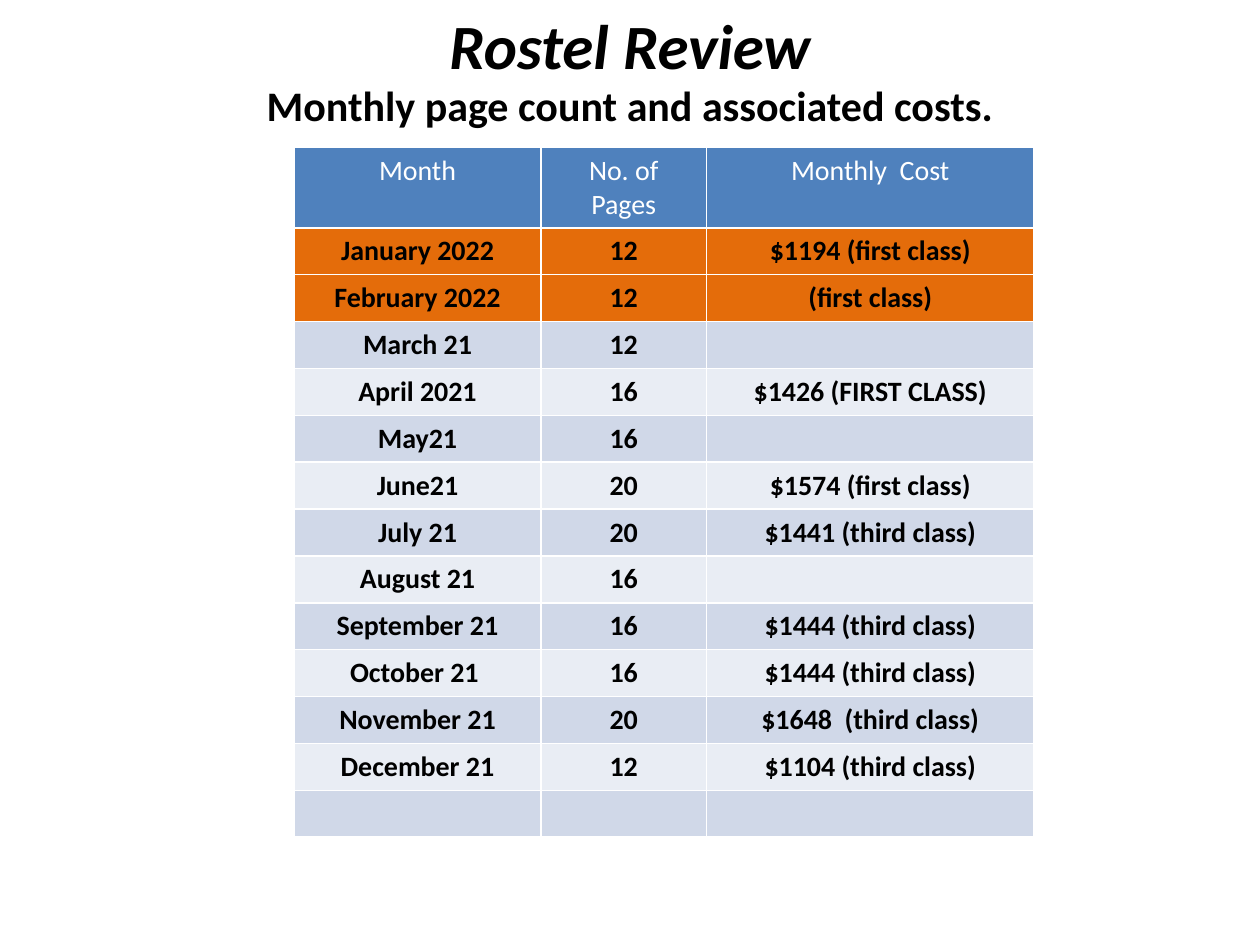
from dataclasses import dataclass
from typing import Any

from lxml.etree import SubElement
from pptx import Presentation
from pptx.dml.color import RGBColor as Rgb
from pptx.enum.text import MSO_ANCHOR as Anchor, PP_ALIGN as Align
from pptx.oxml.ns import qn
from pptx.util import Pt


@dataclass(frozen=True)
class Theme:
    font: str = "Calibri"
    title_size: int = 36
    subtitle_size: int = 24
    table_size: int = 16
    ink: str = "000000"
    header_ink: str = "FFFFFF"
    header_fill: str = "4F81BD"
    current_fill: str = "E46C0A"
    bands: tuple[str, str] = ("D0D8E8", "E9EDF4")


@dataclass(frozen=True)
class Issue:
    month: str = ""
    pages: str = ""
    cost: str = ""
    current: bool = False


THEME = Theme()
HEADINGS = ("Month", "No. of Pages", "Monthly  Cost")
COLUMN_WIDTHS = (141.2, 94.4, 187.4)
HEADER_HEIGHT = 45.8
ROW_HEIGHT = 26.8
ISSUES = (
    Issue("January 2022", "12", "$1194 (first class)", current=True),
    Issue("February 2022", "12", "(first class)", current=True),
    Issue("March 21", "12"),
    Issue("April 2021", "16", "$1426 (FIRST CLASS)"),
    Issue("May21", "16"),
    Issue("June21", "20", "$1574 (first class)"),
    Issue("July 21", "20", "$1441 (third class)"),
    Issue("August 21", "16"),
    Issue("September 21", "16", "$1444 (third class)"),
    Issue("October 21 ", "16", "$1444 (third class)"),
    Issue("November 21", "20", "$1648  (third class)"),
    Issue("December 21", "12", "$1104 (third class)"),
    Issue(),
)


def place(shape: Any, left: float, top: float, width: float, height: float) -> None:
    box = {"left": left, "top": top, "width": width, "height": height}
    for name, points in box.items():
        setattr(shape, name, Pt(points))


def write(frame: Any, text: str, size: int, ink: str, **styles: bool) -> None:
    paragraph = frame.paragraphs[0]
    paragraph.alignment = Align.CENTER
    if not text:
        SubElement(paragraph._p, qn("a:endParaRPr"), sz=str(size * 100))
        return
    run = paragraph.add_run()
    run.text = text
    formats = {"name": THEME.font, "size": Pt(size), **styles}
    for name, value in formats.items():
        setattr(run.font, name, value)
    run.font.color.rgb = Rgb.from_string(ink)


def fill_row(row: Any, texts: tuple[str, ...], fill: str, ink: str, bold: bool) -> None:
    for cell, text in zip(row.cells, texts):
        cell.fill.solid()
        cell.fill.fore_color.rgb = Rgb.from_string(fill)
        write(cell.text_frame, text, THEME.table_size, ink, bold=bold)


def draw_costs(slide: Any) -> None:
    height = HEADER_HEIGHT + ROW_HEIGHT * len(ISSUES)
    costs = slide.shapes.add_table(
        len(ISSUES) + 1, len(HEADINGS), Pt(168), Pt(84.4),
        Pt(sum(COLUMN_WIDTHS)), Pt(height),
    ).table
    for column, width in zip(costs.columns, COLUMN_WIDTHS):
        column.width = Pt(width)
    header, *months = costs.rows
    header.height = Pt(HEADER_HEIGHT)
    fill_row(header, HEADINGS, THEME.header_fill, THEME.header_ink, False)
    for index, (row, issue) in enumerate(zip(months, ISSUES)):
        row.height = Pt(ROW_HEIGHT)
        fill = THEME.current_fill if issue.current else THEME.bands[index % 2]
        fill_row(row, (issue.month, issue.pages, issue.cost), fill, THEME.ink, True)


def main() -> None:
    deck = Presentation()
    deck.slide_width, deck.slide_height = Pt(720), Pt(540)
    slide = deck.slides.add_slide(deck.slide_layouts[5])

    title = slide.shapes.title
    place(title, 36, -5.8, 648, 62.6)
    title.text_frame.vertical_anchor = Anchor.MIDDLE
    write(title.text_frame, "Rostel Review", THEME.title_size, THEME.ink,
          bold=True, italic=True)

    subtitle = slide.shapes.add_textbox(Pt(0), Pt(41.8), Pt(720), Pt(472.3))
    subtitle.text_frame.word_wrap = True
    write(subtitle.text_frame, "Monthly page count and associated costs.",
          THEME.subtitle_size, THEME.ink, bold=True)

    draw_costs(slide)
    deck.save("out.pptx")


if __name__ == "__main__":
    main()
